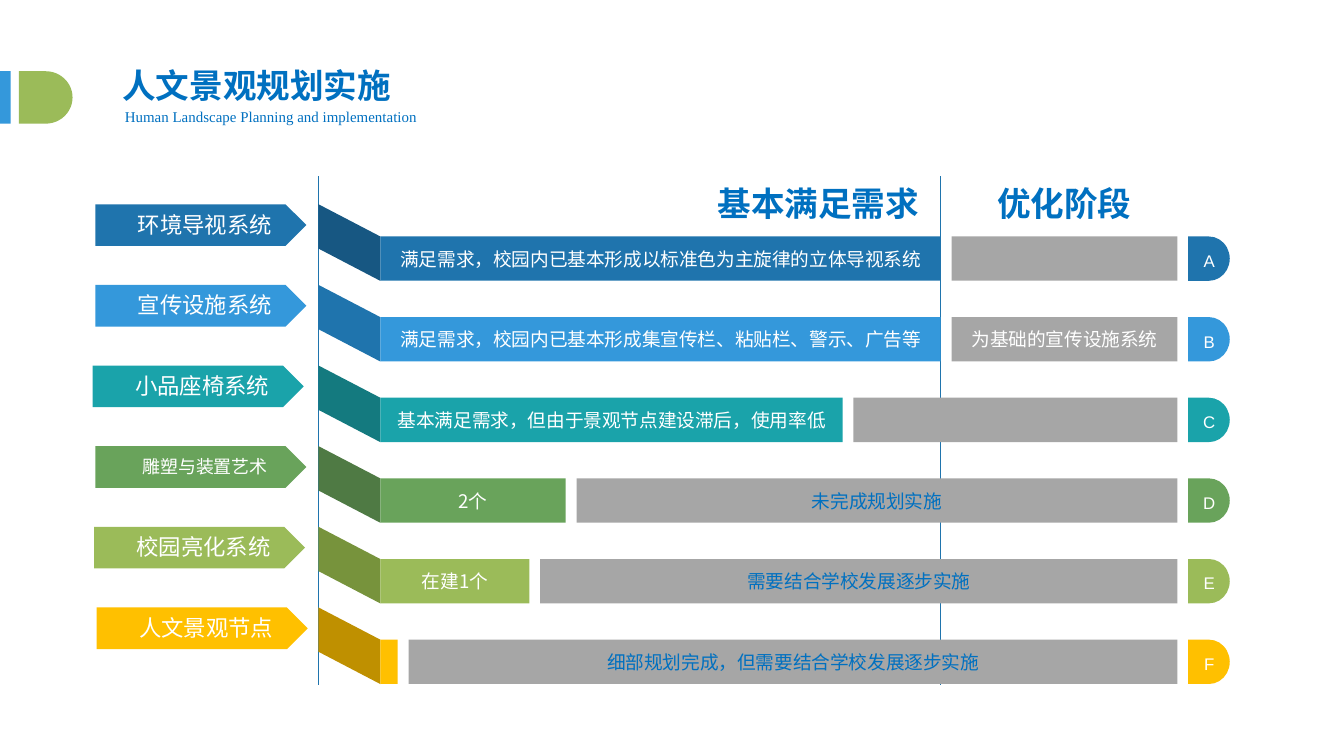
from dataclasses import dataclass

from lxml import etree
from pptx import Presentation
from pptx import util as u
from pptx.dml.color import RGBColor
from pptx.enum import shapes, text
from pptx.oxml.ns import qn


@dataclass(frozen=True)
class Theme:
    cjk: str = "Noto Sans CJK SC"
    serif: str = "Times New Roman"
    sans: str = "Arial"
    white: str = "FFFFFF"
    ink: str = "0070C0"
    rule: str = "1F74AD"
    rest: str = "A6A6A6"
    sky: str = "3498DB"
    leaf: str = "9BBB59"
    heading: float = 18
    label: float = 12
    small_label: float = 9.6
    bar: float = 10
    tag: float = 9
    subtitle: float = 8


@dataclass(frozen=True)
class Row:
    label: str
    color: str
    fold: str
    plate_left: float
    done_right: float
    done: str
    rest: str
    rest_color: str = Theme.ink
    label_size: float = Theme.label


THEME = Theme()
SLIDE_WIDTH = 10
SLIDE_HEIGHT = SLIDE_WIDTH * 9 / 16

# Columns and rows of the diagram, in inches
FOLD_LEFT, BAR_LEFT, PHASE, REST_RIGHT, TAG_LEFT = 2.37, 2.83, 7.0, 8.76, 8.84
RULE_TOP, RULE_BOTTOM = 1.31, 5.1
ROW_TOP, ROW_PITCH, FOLD_DROP, BAR_HEIGHT, GAP = 1.52, 0.6, 0.24, 0.33, 0.08
PLATE_WIDTH, PLATE_HEIGHT = 1.57, 0.31
LABEL_INDENT, LABEL_WIDTH, LABEL_HEIGHT = 0.21, 1.21, 0.3

ROWS = [
    Row("环境导视系统", "1F74AD", "175782", 0.71, PHASE,
        "满足需求，校园内已基本形成以标准色为主旋律的立体导视系统", ""),
    Row("宣传设施系统", "3498DB", "1F74AD", 0.71, PHASE,
        "满足需求，校园内已基本形成集宣传栏、粘贴栏、警示、广告等",
        "为基础的宣传设施系统", THEME.white),
    Row("小品座椅系统", "1AA3AA", "147A7F", 0.69, 6.27,
        "基本满足需求，但由于景观节点建设滞后，使用率低", ""),
    Row("雕塑与装置艺术", "69A35B", "4F7A44", 0.71, 4.21,
        "2个", "未完成规划实施", label_size=THEME.small_label),
    Row("校园亮化系统", "9BBB59", "77933C", 0.7, 3.94,
        "在建1个", "需要结合学校发展逐步实施"),
    Row("人文景观节点", "FFC000", "BF9000", 0.72, 2.96,
        "", "细部规划完成，但需要结合学校发展逐步实施"),
]


def inches(*lengths):
    return [u.Inches(length) for length in lengths]


def write(box, words, size, color=THEME.white, font=THEME.cjk, bold=False,
          align=text.PP_ALIGN.CENTER, anchor=text.MSO_ANCHOR.MIDDLE,
          margins=(0.1, 0.05, 0.1, 0.05), spacing=None, grow=False):
    """Fill a shape with one formatted paragraph; margins run left, top, right, bottom."""
    frame = box.text_frame
    frame.word_wrap = True
    frame.auto_size = (text.MSO_AUTO_SIZE.SHAPE_TO_FIT_TEXT if grow
                       else text.MSO_AUTO_SIZE.NONE)
    frame.vertical_anchor = anchor
    (frame.margin_left, frame.margin_top,
     frame.margin_right, frame.margin_bottom) = inches(*margins)
    para = frame.paragraphs[0]
    para.alignment = align
    if spacing:
        para.line_spacing = spacing
    span = para.add_run()
    span.text = words
    span.font.name = font
    span.font.size = u.Pt(size)
    span.font.bold = bold
    span.font.color.rgb = RGBColor.from_string(color)
    east_asian = etree.Element(qn("a:ea"), typeface=font)
    span.font._element.find(qn("a:latin")).addnext(east_asian)


def paint(shape, color):
    shape.shadow.inherit = False
    shape.fill.solid()
    shape.fill.fore_color.rgb = RGBColor.from_string(color)
    shape.line.fill.background()
    return shape


def add_block(page, kind, left, top, width, height, color):
    area = inches(left, top, width, height)
    return paint(page.shapes.add_shape(kind, *area), color)


def add_bar(page, left, right, top, color, words, words_color=THEME.white):
    bar = add_block(page, shapes.MSO_SHAPE.RECTANGLE,
                    left, top, right - left, BAR_HEIGHT, color)
    if words:
        write(bar, words, THEME.bar, words_color)


def add_fold(page, top, color):
    """Slanted band that links a label to its bar."""
    corners = [(FOLD_LEFT, top), (BAR_LEFT, top + FOLD_DROP),
               (BAR_LEFT, top + FOLD_DROP + BAR_HEIGHT), (FOLD_LEFT, top + BAR_HEIGHT)]
    points = [inches(*corner) for corner in corners]
    outline = page.shapes.build_freeform(*points[0])
    outline.add_line_segments(points[1:], close=True)
    paint(outline.convert_to_shape(), color)


def add_rule(page, x):
    rule = page.shapes.add_connector(
        shapes.MSO_CONNECTOR.STRAIGHT, *inches(x, RULE_TOP, x, RULE_BOTTOM))
    rule.line.color.rgb = RGBColor.from_string(THEME.rule)
    rule.line.width = u.Pt(0.5)
    etree.SubElement(rule._element.spPr, qn("a:effectLst"))


def add_text(page, left, top, width, height, words, size, **form):
    box = page.shapes.add_textbox(*inches(left, top, width, height))
    write(box, words, size, **form)


def add_header(page):
    add_block(page, shapes.MSO_SHAPE.RECTANGLE, 0, 0.53, 0.08, 0.39, THEME.sky)
    add_block(page, shapes.MSO_SHAPE.FLOWCHART_DELAY, 0.14, 0.53, 0.4, 0.39, THEME.leaf)
    flush = dict(color=THEME.ink, align=text.PP_ALIGN.LEFT,
                 anchor=text.MSO_ANCHOR.TOP, grow=True)
    title = page.shapes.title
    title.left, title.top, title.width, title.height = inches(0.76, 0.43, 2.91, 0.4)
    write(title, "人文景观规划实施", THEME.heading, bold=True,
          margins=(0.15, 0.05, 0.1, 0.05), **flush)
    add_text(page, 0.83, 0.75, 2.51, 0.23, "Human Landscape Planning and implementation",
             THEME.subtitle, font=THEME.serif, **flush)
    for left, width, words in ((5.24, 1.76, "基本满足需求"), (7.32, 1.29, "优化阶段")):
        add_text(page, left, RULE_TOP, width, 0.4, words, THEME.heading, bold=True, **flush)


def add_row(page, row, top, letter):
    bar_top = top + FOLD_DROP
    add_block(page, shapes.MSO_SHAPE.PENTAGON, row.plate_left, top,
              PLATE_WIDTH, PLATE_HEIGHT, row.color)
    add_text(page, row.plate_left + LABEL_INDENT, top, LABEL_WIDTH, LABEL_HEIGHT,
             row.label, row.label_size, margins=(0.07, 0.04, 0.07, 0.04))
    add_fold(page, top, row.fold)
    add_bar(page, BAR_LEFT, row.done_right, bar_top, row.color, row.done)
    add_bar(page, row.done_right + GAP, REST_RIGHT, bar_top, THEME.rest,
            row.rest, row.rest_color)
    tag = add_block(page, shapes.MSO_SHAPE.FLOWCHART_DELAY, TAG_LEFT, bar_top,
                    0.31, BAR_HEIGHT, row.color)
    write(tag, letter, THEME.tag, font=THEME.sans, spacing=1.2, margins=(0.05, 0, 0, 0))


def main():
    deck = Presentation()
    deck.slide_width, deck.slide_height = inches(SLIDE_WIDTH, SLIDE_HEIGHT)
    page = deck.slides.add_slide(deck.slide_layouts.get_by_name("Title Only"))
    add_header(page)
    for x in (FOLD_LEFT, PHASE):
        add_rule(page, x)
    for index, (row, letter) in enumerate(zip(ROWS, "ABCDEF")):
        add_row(page, row, ROW_TOP + index * ROW_PITCH, letter)
    deck.save("out.pptx")


if __name__ == "__main__":
    main()
